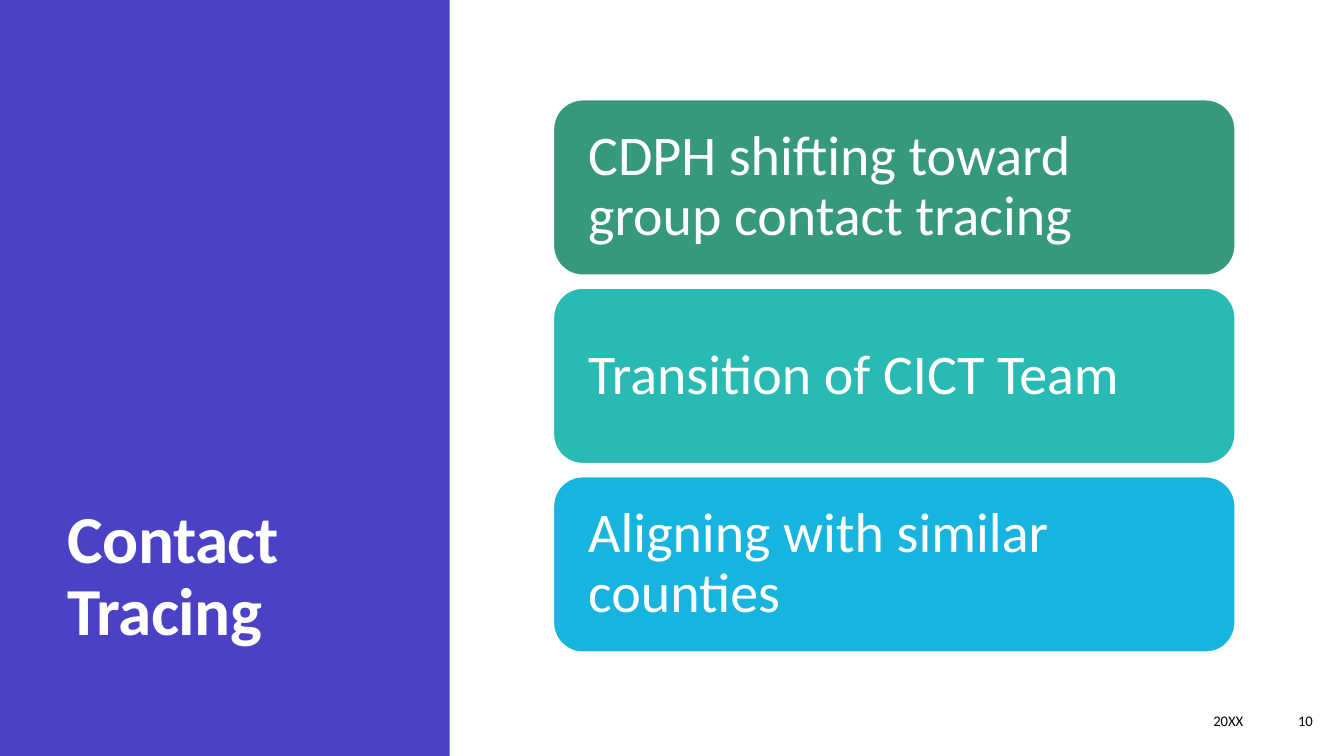
"""Build the Contact Tracing slide with a side title panel and three topic cards."""
from dataclasses import dataclass

from pptx import Presentation
from pptx.dml.color import RGBColor
from pptx.enum.shapes import MSO_SHAPE
from pptx.enum.text import MSO_ANCHOR, MSO_AUTO_SIZE, PP_ALIGN
from pptx.shapes.autoshape import Shape
from pptx.slide import Slide
from pptx.text.text import TextFrame
from pptx.util import Emu, Pt

RECTANGLE = MSO_SHAPE.RECTANGLE
ROUNDED = MSO_SHAPE.ROUNDED_RECTANGLE
MIDDLE, BOTTOM = MSO_ANCHOR.MIDDLE, MSO_ANCHOR.BOTTOM
LEFT, RIGHT = PP_ALIGN.LEFT, PP_ALIGN.RIGHT
NO_AUTOFIT = MSO_AUTO_SIZE.NONE

WHITE = RGBColor(0xFF, 0xFF, 0xFF)
BLACK = RGBColor(0x00, 0x00, 0x00)
INDIGO = RGBColor(0x4A, 0x41, 0xC5)
GREEN = RGBColor(0x37, 0x99, 0x7B)
TEAL = RGBColor(0x29, 0xBA, 0xB4)
SKY = RGBColor(0x17, 0xB4, 0xDF)

EMU_PER_PX = 9144
SLIDE_WIDTH, SLIDE_HEIGHT = 1333, 750
CARD_LEFT, CARD_TOP, CARD_WIDTH, CARD_HEIGHT = 549, 99, 676, 174
CARD_PITCH = 187
CARD_INSET = 26
FOOTER_TOP, FOOTER_HEIGHT = 695, 40


@dataclass(frozen=True)
class Box:
    left: int
    top: int
    width: int
    height: int

    def emu(self) -> list[Emu]:
        return [px(side) for side in (self.left, self.top, self.width, self.height)]


@dataclass(frozen=True)
class TextStyle:
    size: float
    color: RGBColor
    anchor: MSO_ANCHOR
    align: PP_ALIGN = LEFT
    bold: bool = False
    line_spacing: float = 1.0


@dataclass(frozen=True)
class Topic:
    wording: str
    color: RGBColor


@dataclass(frozen=True)
class FooterItem:
    wording: str
    left: int
    width: int


TITLE_STYLE = TextStyle(48, WHITE, BOTTOM, bold=True, line_spacing=0.9)
TOPIC_STYLE = TextStyle(40, WHITE, MIDDLE, line_spacing=0.9)
FOOTER_STYLE = TextStyle(10.5, BLACK, MIDDLE, RIGHT)

TOPICS = (
    Topic("CDPH shifting toward group contact tracing", GREEN),
    Topic("Transition of CICT Team", TEAL),
    Topic("Aligning with similar counties", SKY),
)
FOOTER_ITEMS = (FooterItem("20XX", 767, 476), FooterItem("10", 1243, 69))


def px(length: int) -> Emu:
    return Emu(length * EMU_PER_PX)


def apply_format(target: object, values: dict[str, object]) -> None:
    for attribute, value in values.items():
        setattr(target, attribute, value)


def write(frame: TextFrame, wording: str, style: TextStyle) -> None:
    frame.text = wording
    apply_format(frame, {"word_wrap": True, "auto_size": NO_AUTOFIT,
                         "vertical_anchor": style.anchor})
    paragraph = frame.paragraphs[0]
    apply_format(paragraph, {"alignment": style.align,
                             "line_spacing": style.line_spacing})
    font = paragraph.runs[0].font
    apply_format(font, {"name": "Calibri", "size": Pt(style.size), "bold": style.bold})
    font.color.rgb = style.color


def add_block(slide: Slide, preset: MSO_SHAPE, box: Box, color: RGBColor) -> Shape:
    block = slide.shapes.add_shape(preset, *box.emu())
    block.shadow.inherit = False
    block.fill.solid()
    block.fill.fore_color.rgb = color
    block.line.fill.background()
    return block


def add_title_panel(slide: Slide) -> None:
    panel = add_block(slide, RECTANGLE, Box(0, 0, 446, SLIDE_HEIGHT), INDIGO)
    title = slide.shapes.title
    panel.element.addnext(title.element)
    left, top, width, height = Box(57, 51, 345, 599).emu()
    apply_format(title, {"left": left, "top": top, "width": width, "height": height})
    write(title.text_frame, "Contact Tracing", TITLE_STYLE)
    title.text_frame.paragraphs[0].runs[0]._r.get_or_add_rPr().set("spc", "-40")


def add_topic_card(slide: Slide, position: int, topic: Topic) -> None:
    box = Box(CARD_LEFT, CARD_TOP + position * CARD_PITCH, CARD_WIDTH, CARD_HEIGHT)
    card = add_block(slide, ROUNDED, box, topic.color)
    card.line.color.rgb = WHITE
    card.line.width = Pt(1)
    write(card.text_frame, topic.wording, TOPIC_STYLE)
    apply_format(card.text_frame, {f"margin_{side}": px(CARD_INSET)
                                   for side in ("left", "top", "right", "bottom")})


def add_footer_item(slide: Slide, item: FooterItem) -> None:
    box = Box(item.left, FOOTER_TOP, item.width, FOOTER_HEIGHT)
    footer = slide.shapes.add_textbox(*box.emu())
    write(footer.text_frame, item.wording, FOOTER_STYLE)


def main() -> None:
    deck = Presentation()
    apply_format(deck, {"slide_width": px(SLIDE_WIDTH), "slide_height": px(SLIDE_HEIGHT)})
    slide = deck.slides.add_slide(deck.slide_layouts.get_by_name("Title Only"))
    add_title_panel(slide)
    for position, topic in enumerate(TOPICS):
        add_topic_card(slide, position, topic)
    for item in FOOTER_ITEMS:
        add_footer_item(slide, item)
    deck.save("out.pptx")


if __name__ == "__main__":
    main()
